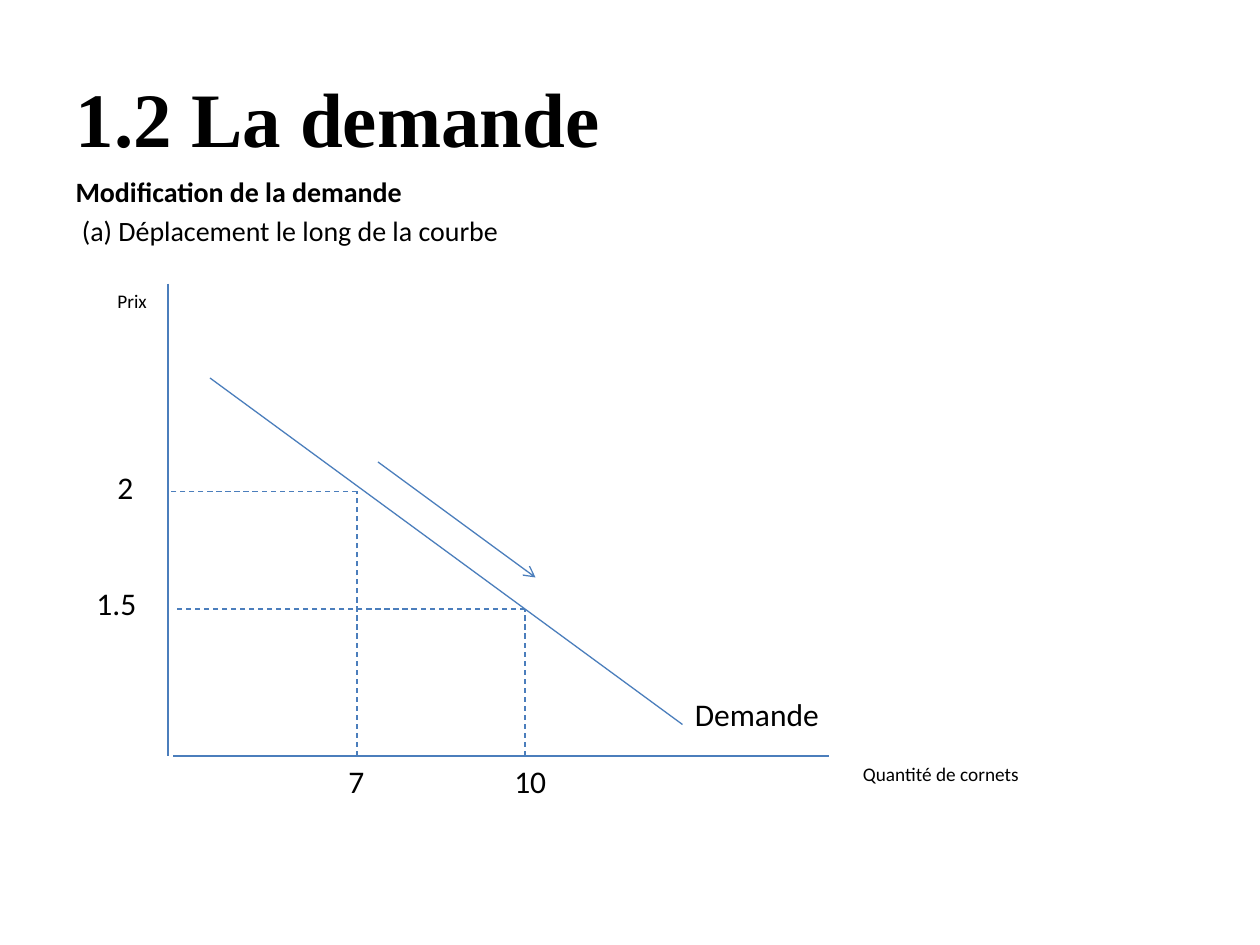
from dataclasses import dataclass

from lxml.etree import SubElement
from pptx import Presentation
from pptx.dml.color import RGBColor
from pptx.enum.dml import MSO_LINE
from pptx.enum.shapes import MSO_CONNECTOR
from pptx.enum.text import MSO_ANCHOR, MSO_AUTO_SIZE, PP_ALIGN
from pptx.oxml.ns import qn
from pptx.util import Inches, Pt


@dataclass(frozen=True)
class Theme:
    ink: RGBColor = RGBColor(0, 0, 0)
    line: RGBColor = RGBColor(0x4B, 0x7E, 0xBC)
    head_font: str = "Times New Roman"
    body_font: str = "Calibri"
    title: int = 44
    value: int = 18
    body: int = 16
    label: int = 11
    stroke: float = 0.75


class DemandSlide:
    """Draws on one slide with a grid of 120 columns by 90 rows."""

    def __init__(self, prs, theme):
        self.theme = theme
        self.col = prs.slide_width / 120
        self.row = prs.slide_height / 90
        self.slide = prs.slides.add_slide(prs.slide_layouts[1])

    def at(self, x, y):
        return round(x * self.col), round(y * self.row)

    def place(self, sp, x, y, w, h):
        sp.left, sp.top = self.at(x, y)
        sp.width, sp.height = self.at(w, h)

    def set_text(self, tf, text, size, font, bold=False):
        tf.word_wrap = True
        tf.auto_size = MSO_AUTO_SIZE.NONE
        tf.text = text
        for p in tf.paragraphs:
            p.alignment = PP_ALIGN.LEFT
            for r in p.runs:
                r.font.name, r.font.size, r.font.bold = font, Pt(size), bold
                r.font.color.rgb = self.theme.ink

    def title(self, text, *box):
        sp = self.slide.shapes.title
        self.place(sp, *box)
        self.set_text(sp.text_frame, text, self.theme.title, self.theme.head_font, True)
        sp.text_frame.vertical_anchor = MSO_ANCHOR.MIDDLE

    def body(self, lines, *box):
        sp = self.slide.placeholders[1]
        self.place(sp, *box)
        tf = sp.text_frame
        self.set_text(tf, "\n".join(lines), self.theme.body, self.theme.body_font)
        for p in tf.paragraphs:
            p.space_before = Pt(self.theme.body * 0.2)
            pPr = p._p.get_or_add_pPr()
            pPr.set("marL", "0")
            pPr.set("indent", "0")
            SubElement(pPr, qn("a:buNone"))
        tf.paragraphs[0].runs[0].font.bold = True

    def label(self, text, size, *box):
        sp = self.slide.shapes.add_textbox(0, 0, 0, 0)
        self.place(sp, *box)
        self.set_text(sp.text_frame, text, size, self.theme.body_font)

    def line(self, start, end, dash=False, arrow=False):
        cxn = self.slide.shapes.add_connector(
            MSO_CONNECTOR.STRAIGHT, *self.at(*start), *self.at(*end))
        cxn.line.color.rgb = self.theme.line
        cxn.line.width = Pt(self.theme.stroke)
        if dash:
            cxn.line.dash_style = MSO_LINE.DASH
        spPr = cxn._element.spPr
        if arrow:
            SubElement(spPr.find(qn("a:ln")), qn("a:tailEnd"), type="arrow")
        SubElement(spPr, qn("a:effectLst"))


def main():
    prs = Presentation()
    prs.slide_width, prs.slide_height = Inches(10), Inches(7.5)
    theme = Theme()
    s = DemandSlide(prs, theme)

    s.title("1.2 La demande", 6, 3.6, 108, 15)
    s.body(["Modification de la demande", " (a) Déplacement le long de la courbe"],
           6, 16, 108, 8.3)

    axis_x, axis_y = 16, 72
    s.line((axis_x, 27), (axis_x, axis_y))
    s.line((axis_x + 0.5, axis_y), (79, axis_y))
    for x, y, left in ((34, 46.8, axis_x), (50, 58, axis_x + 0.5)):
        s.line((x, axis_y), (x, y), dash=True)
        s.line((x, y), (left, y), dash=True)
    s.line((20, 36), (65, 69))
    s.line((36, 44), (51, 55), arrow=True)

    for text, *box in (("7", 32, 72, 11, 4.8), ("10", 47.8, 72, 12.2, 4.8),
                       ("2", 10, 44, 6, 4.8), ("1.5", 8, 55, 8, 4.8),
                       ("Demande", 65, 65.6, 29, 4.8)):
        s.label(text, theme.value, *box)
    s.label("Prix", theme.label, 10, 27, 6, 3.5)
    s.label("Quantité de cornets", theme.label, 81, 72, 18, 3.5)

    prs.save("out.pptx")


if __name__ == "__main__":
    main()
